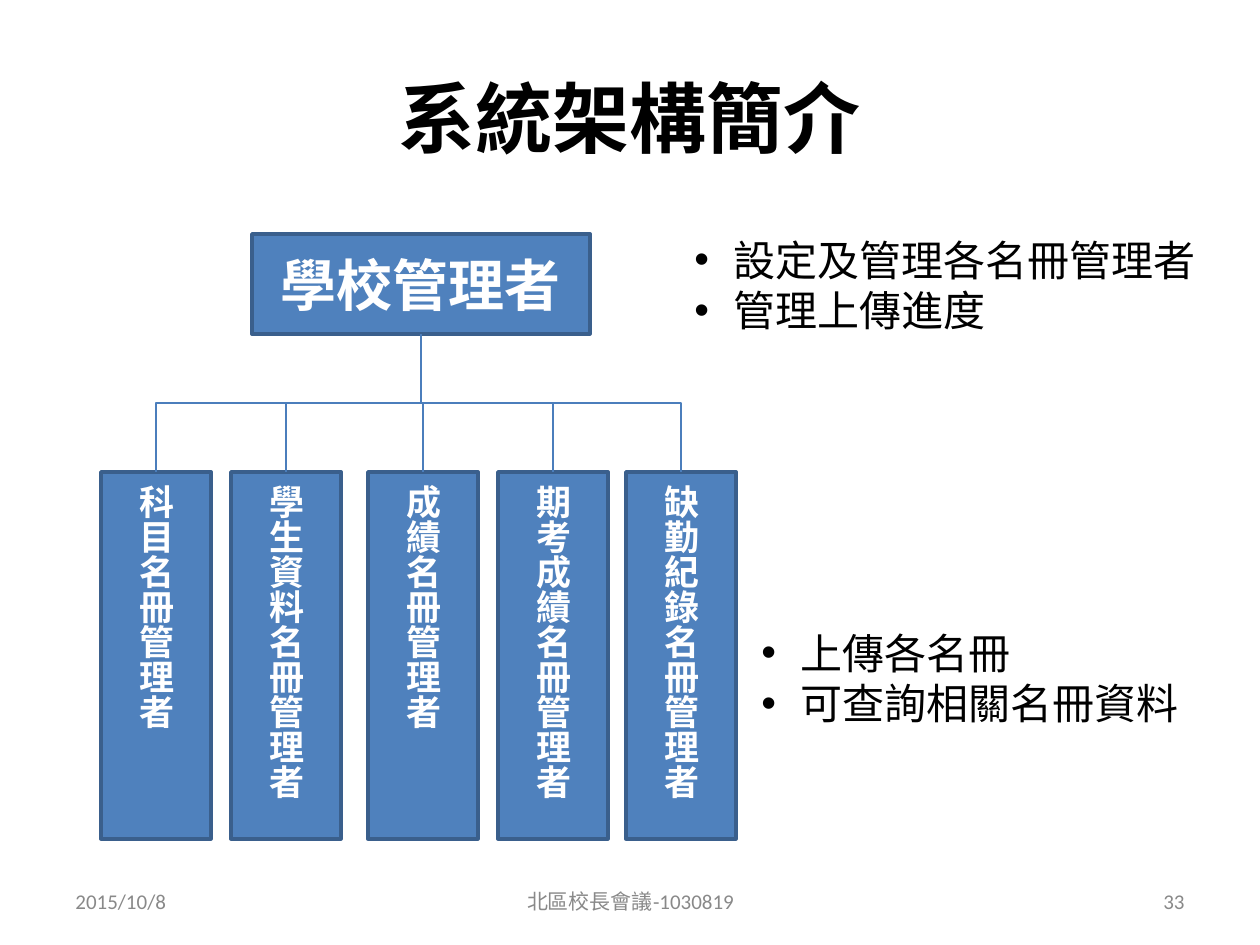
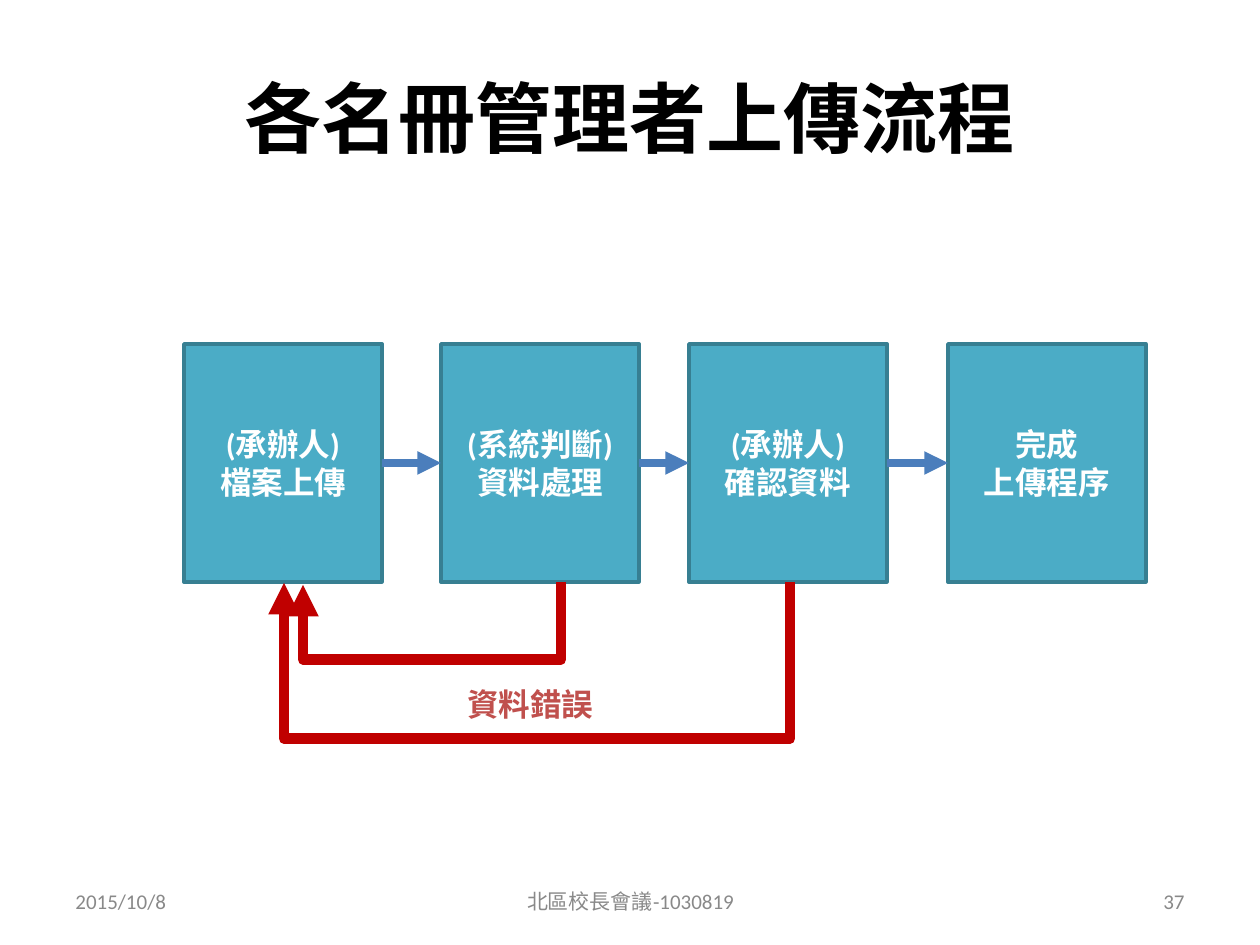
from lxml.etree import SubElement
from pptx import Presentation
from pptx.dml.color import RGBColor
from pptx.enum.shapes import MSO_CONNECTOR, MSO_SHAPE
from pptx.enum.text import MSO_ANCHOR, MSO_AUTO_SIZE, PP_ALIGN
from pptx.oxml.ns import qn
from pptx.util import Emu, Pt

HUES = {
    "black": "000000", "white": "FFFFFF", "grey": "898989",
    "blue": "4F81BD", "navy": "3A5F8C", "link": "4B7EBC",
    "teal": "4BACC6", "deep": "377F92", "red": "C00000", "rose": "C0504D",
}
CJK = "Noto Sans CJK SC"
SCALE = 914400 / 126
LEFT, MID, RIGHT = PP_ALIGN.LEFT, PP_ALIGN.CENTER, PP_ALIGN.RIGHT


def px(n):
    return Emu(round(n * SCALE))


def hue(name):
    return RGBColor.from_string(HUES[name])


def write(shape, text, size, tint, face=CJK, bold=False, align=LEFT,
          anchor=MSO_ANCHOR.MIDDLE, bullet=False):
    frame = shape.text_frame
    frame.text = text
    frame.word_wrap = True
    frame.vertical_anchor = anchor
    looks = {"size": Pt(size), "bold": bold, "name": face}
    for para in frame.paragraphs:
        para.alignment = align
        if bullet:
            props = para._p.get_or_add_pPr()
            props.set("marL", str(px(39)))
            props.set("indent", str(-px(39)))
            SubElement(props, qn("a:buFont"), typeface="Arial")
            SubElement(props, qn("a:buChar"), char="•")
        for run in para.runs:
            for key, value in looks.items():
                setattr(run.font, key, value)
            run.font.color.rgb = hue(tint)
            SubElement(run._r.get_or_add_rPr(), qn("a:ea"), typeface=CJK)


def label(slide, box, text, size, tint, grow=False, **style):
    shape = slide.shapes.add_textbox(*map(px, box))
    write(shape, text, size, tint, **style)
    if grow:
        shape.text_frame.word_wrap = False
        shape.text_frame.auto_size = MSO_AUTO_SIZE.SHAPE_TO_FIT_TEXT


def block(slide, box, text, size, fill, edge, face=CJK, tall=False):
    shape = slide.shapes.add_shape(MSO_SHAPE.RECTANGLE, *map(px, box))
    shape.shadow.inherit = False
    shape.fill.solid()
    shape.fill.fore_color.rgb = hue(fill)
    shape.line.color.rgb = hue(edge)
    shape.line.width = Pt(2)
    write(shape, text, size, "white", face, True, MID)
    if tall:
        shape.text_frame._txBody.bodyPr.set("vert", "eaVert")
    return shape


def link(slide, kind, ends, tint, width, arrow=False):
    line = slide.shapes.add_connector(kind, *map(px, ends))
    line.line.color.rgb = hue(tint)
    line.line.width = Pt(width)
    if arrow:
        SubElement(line.line._get_or_add_ln(), qn("a:tailEnd"), type="triangle")
    SubElement(line._element.spPr, qn("a:effectLst"))
    return line


def elbow(slide, start, end, drop, tint, width, arrow=False):
    """Leave start downward, turn at drop below it, and meet end vertically."""
    (x1, y1), (x2, y2) = start, end
    high, wide = y2 - y1, abs(x2 - x1)
    cx, cy = (x1 + x2) / 2, (y1 + y2) / 2
    ends = (cx - high / 2, cy - wide / 2, cx + high / 2, cy + wide / 2)
    line = link(slide, MSO_CONNECTOR.ELBOW, ends, tint, width, arrow)
    props = line._element.spPr
    turn = props.find(qn("a:xfrm"))
    turn.set("rot", str((90 if x2 < x1 else 270) * 60000))
    if x2 >= x1:
        turn.set("flipH", "1")
    guide = props.find(qn("a:prstGeom")).find(qn("a:avLst"))
    ratio = round(drop / high * 100000)
    SubElement(guide, qn("a:gd"), name="adj1", fmla=f"val {ratio}")


def page(deck, title, number):
    slide = deck.slides.add_slide(deck.slide_layouts[6])
    label(slide, (63, 38, 1134, 157), title, 44, "black", bold=True, align=MID)
    foot = [(63, 294, "2015/10/8", LEFT),
            (431, 399, "北區校長會議-1030819", MID),
            (903, 294, number, RIGHT)]
    for x, wide, text, align in foot:
        label(slide, (x, 876, wide, 50), text, 12, "grey",
              face="Calibri", align=align)
    return slide


def tree(slide, box):
    x, y, wide, high = box
    leaf, tall = 110, 367
    top = y + high - tall
    stem = (x + 320, y + 100)
    block(slide, (x + 151, y, 338, 100), "學校管理者", 32, "blue", "navy")
    roles = [(0, "科目"), (130, "學生資料"), (267, "成績"),
             (397, "期考成績"), (wide - leaf, "缺勤紀錄")]
    for dx, role in roles:
        block(slide, (x + dx, top, leaf, tall), role + "名冊管理者", 20,
              "blue", "navy", tall=True)
        tip = (x + dx + leaf / 2, top)
        elbow(slide, stem, tip, (top - stem[1]) / 2, "link", 0.75)


def duties(slide, box, lines):
    label(slide, box, "\n".join(lines), 24, "black", grow=True,
          anchor=MSO_ANCHOR.TOP, bullet=True)


def flow(slide, box):
    x, y, wide, high = box
    step = 198
    steps = [(0, "(承辦人)\n檔案上傳"), (257, "(系統判斷)\n資料處理"),
             (505, "(承辦人)\n確認資料"), (wide - step, "完成\n上傳程序")]
    cards = [block(slide, (x + dx, y, step, high), text, 18, "teal", "deep",
                   face="Calibri") for dx, text in steps]
    for a, b in zip(cards, cards[1:]):
        line = link(slide, MSO_CONNECTOR.STRAIGHT, (0, 0, 0, 0),
                    "link", 4.5, True)
        line.begin_connect(a, 3)
        line.end_connect(b, 1)
    base = y + high
    for out, back, gap, drop in [(377, 119, 3, 78), (606, 100, 1, 158)]:
        elbow(slide, (x + out, base), (x + back, base + gap), drop,
              "red", 6, True)
    label(slide, (x + 271, base + 97, 152, 50), "資料錯誤", 18, "rose",
          grow=True, face="Arial", bold=True, anchor=MSO_ANCHOR.TOP)


def main():
    deck = Presentation()
    deck.slide_width, deck.slide_height = px(1260), px(945)

    plan = page(deck, "系統架構簡介", "33")
    tree(plan, (101, 234, 635, 605))
    duties(plan, (682, 228, 532, 115),
           ["設定及管理各名冊管理者", "管理上傳進度"])
    duties(plan, (749, 621, 447, 115),
           ["上傳各名冊", "可查詢相關名冊資料"])

    load = page(deck, "各名冊管理者上傳流程", "37")
    flow(load, (184, 344, 962, 238))

    deck.save("out.pptx")


if __name__ == "__main__":
    main()
